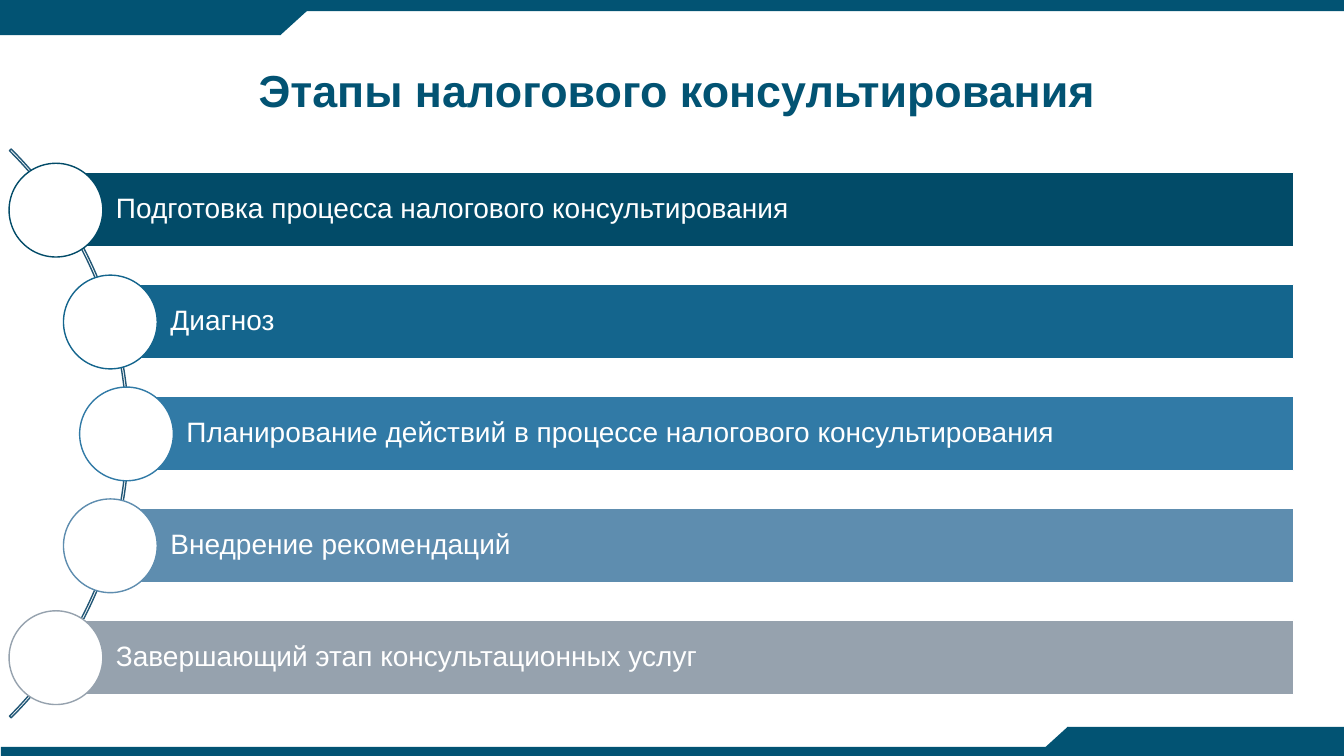
from dataclasses import dataclass

from pptx import Presentation
from pptx.dml.color import RGBColor
from pptx.enum.shapes import MSO_SHAPE
from pptx.enum.text import MSO_ANCHOR, MSO_AUTO_SIZE, PP_ALIGN
from pptx.shapes.autoshape import Shape
from pptx.slide import Slide
from pptx.util import Pt

EMU_PER_PX = 9144
SLIDE_WIDTH, SLIDE_HEIGHT = 1333, 750
FONT = "Arial"

BRAND = RGBColor(0x02, 0x53, 0x73)
ARC_LINE = RGBColor(0x22, 0x57, 0x76)
WHITE = RGBColor(0xFF, 0xFF, 0xFF)
NAVY = RGBColor(0x02, 0x4B, 0x68)
OCEAN = RGBColor(0x14, 0x65, 0x8D)
AZURE = RGBColor(0x31, 0x7A, 0xA6)
STEEL = RGBColor(0x5E, 0x8D, 0xAF)
SLATE = RGBColor(0x96, 0xA2, 0xAE)

STAGE_TOP, STAGE_PITCH = 171, 111
BAR_RIGHT, BAR_HEIGHT = 1283, 74
CIRCLE_SIZE = 93


@dataclass(frozen=True)
class Ornament:
    preset: MSO_SHAPE
    left: int
    top: int
    width: int
    height: int
    rotation: int = 0


@dataclass(frozen=True)
class Stage:
    label: str
    circle_left: int
    color: RGBColor


ORNAMENTS = [
    Ornament(MSO_SHAPE.RECTANGLE, 0, 0, 1333, 11),
    Ornament(MSO_SHAPE.RECTANGLE, 1, 741, 1332, 9),
    Ornament(MSO_SHAPE.RECTANGLE, 0, 5, 278, 30),
    Ornament(MSO_SHAPE.FLOWCHART_MERGE, 245, 5, 66, 30),
    Ornament(MSO_SHAPE.RECTANGLE, 1059, 721, 274, 29),
    Ornament(MSO_SHAPE.FLOWCHART_MERGE, 1026, 721, 66, 30, 180),
]

STAGES = [
    Stage("Подготовка процесса налогового консультирования", 9, NAVY),
    Stage("Диагноз", 63, OCEAN),
    Stage("Планирование действий в процессе налогового консультирования", 79, AZURE),
    Stage("Внедрение рекомендаций", 63, STEEL),
    Stage("Завершающий этап консультационных услуг", 9, SLATE),
]


def px(length: int) -> int:
    return length * EMU_PER_PX


def add_preset(slide: Slide, preset: MSO_SHAPE, left: int, top: int, width: int,
               height: int, fill: RGBColor | None, line: RGBColor | None) -> Shape:
    shape = slide.shapes.add_shape(preset, px(left), px(top), px(width), px(height))
    shape.shadow.inherit = False
    if fill is None:
        shape.fill.background()
    else:
        shape.fill.solid()
        shape.fill.fore_color.rgb = fill
    if line is None:
        shape.line.fill.background()
    else:
        shape.line.color.rgb = line
        shape.line.width = Pt(1)
    return shape


def write_line(shape: Shape, text: str, size: int, color: RGBColor,
               alignment: PP_ALIGN, bold: bool = False) -> None:
    shape.text_frame.text = text
    paragraph = shape.text_frame.paragraphs[0]
    paragraph.alignment = alignment
    paragraph.line_spacing = 0.9
    paragraph.space_before = Pt(0)
    font = paragraph.runs[0].font
    font.name, font.size, font.bold = FONT, Pt(size), bold
    font.color.rgb = color


def add_ornament(slide: Slide, ornament: Ornament) -> None:
    shape = add_preset(slide, ornament.preset, ornament.left, ornament.top,
                       ornament.width, ornament.height, BRAND, None)
    shape.rotation = ornament.rotation


def set_heading(slide: Slide) -> None:
    heading = slide.shapes.title
    heading.left, heading.top = px(125), px(63)
    heading.width, heading.height = px(1088), px(89)
    frame = heading.text_frame
    frame.word_wrap = True
    frame.auto_size = MSO_AUTO_SIZE.NONE
    frame.vertical_anchor = MSO_ANCHOR.TOP
    frame.margin_left, frame.margin_right = px(15), px(10)
    frame.margin_top = frame.margin_bottom = px(5)
    write_line(heading, "Этапы налогового консультирования", 32, BRAND,
               PP_ALIGN.CENTER, bold=True)


def add_arc(slide: Slide) -> None:
    arc = add_preset(slide, MSO_SHAPE.BLOCK_ARC, -670, 31, 798, 798, None, ARC_LINE)
    for index, value in enumerate((189, 27, 0.003)):
        arc.adjustments[index] = value


def add_stage(slide: Slide, stage: Stage, top: int) -> None:
    bar_left = stage.circle_left + CIRCLE_SIZE // 2 + 1
    bar = add_preset(slide, MSO_SHAPE.RECTANGLE, bar_left, top,
                     BAR_RIGHT - bar_left, BAR_HEIGHT, stage.color, WHITE)
    frame = bar.text_frame
    frame.word_wrap = True
    frame.vertical_anchor = MSO_ANCHOR.MIDDLE
    frame.margin_left = px(59)
    frame.margin_top = frame.margin_right = frame.margin_bottom = px(6)
    write_line(bar, stage.label, 20, WHITE, PP_ALIGN.LEFT)
    circle_top = top - (CIRCLE_SIZE - BAR_HEIGHT) // 2
    add_preset(slide, MSO_SHAPE.OVAL, stage.circle_left, circle_top,
               CIRCLE_SIZE, CIRCLE_SIZE, WHITE, stage.color)


def main() -> None:
    presentation = Presentation()
    presentation.slide_width = px(SLIDE_WIDTH)
    presentation.slide_height = px(SLIDE_HEIGHT)
    slide = presentation.slides.add_slide(presentation.slide_layouts[5])
    for ornament in ORNAMENTS:
        add_ornament(slide, ornament)
    set_heading(slide)
    add_arc(slide)
    for index, stage in enumerate(STAGES):
        add_stage(slide, stage, STAGE_TOP + index * STAGE_PITCH)
    presentation.save("out.pptx")


if __name__ == "__main__":
    main()
